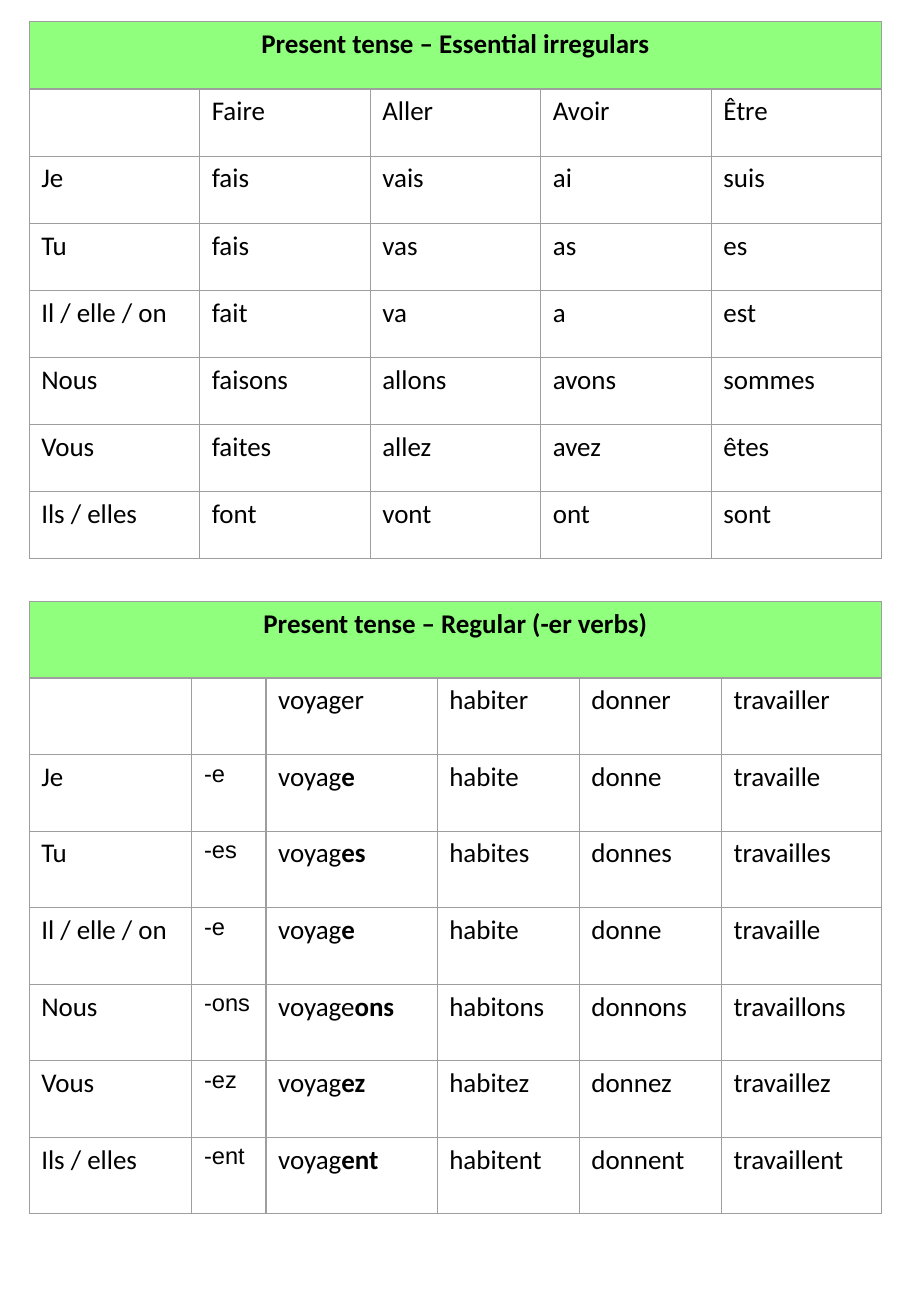
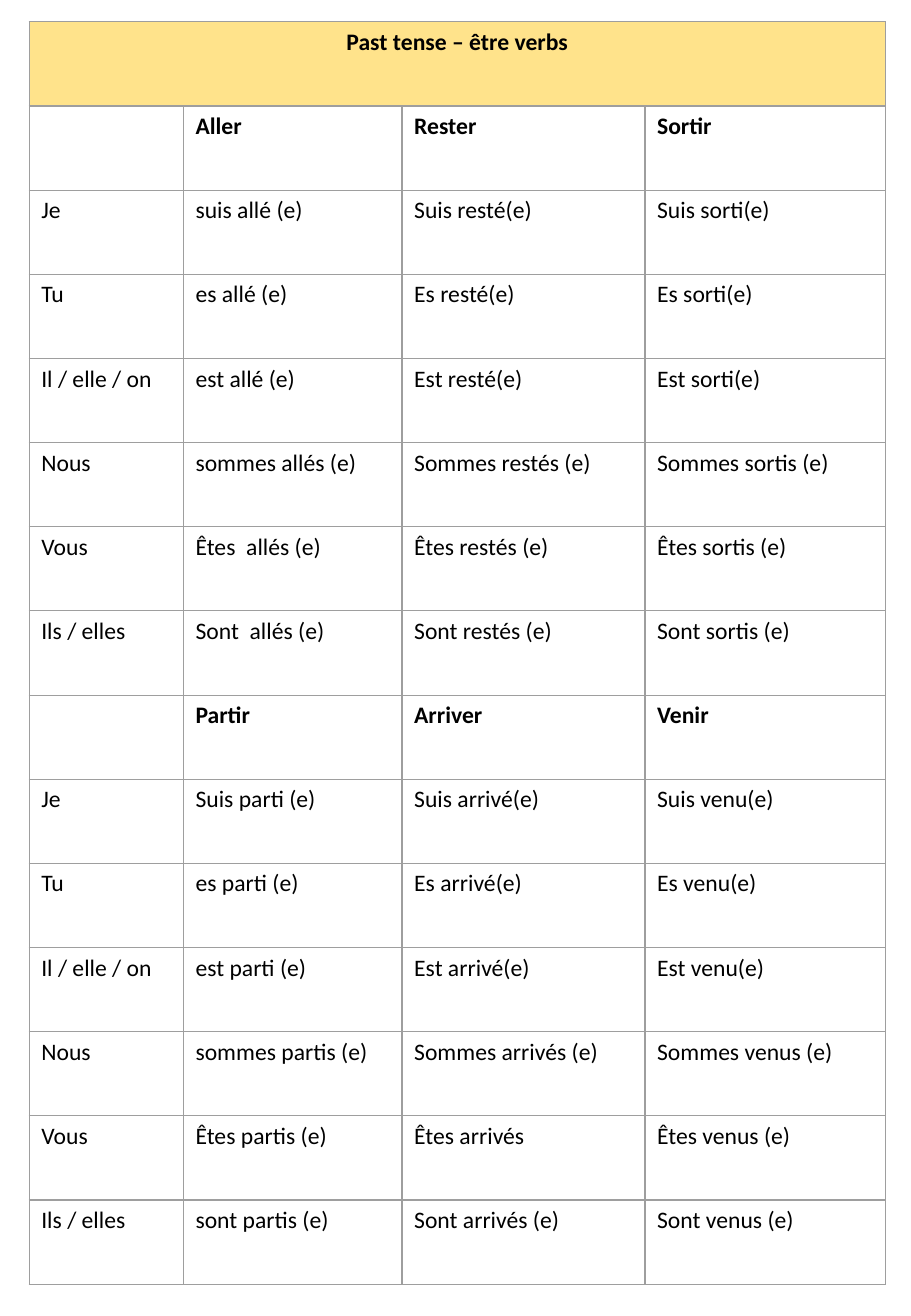
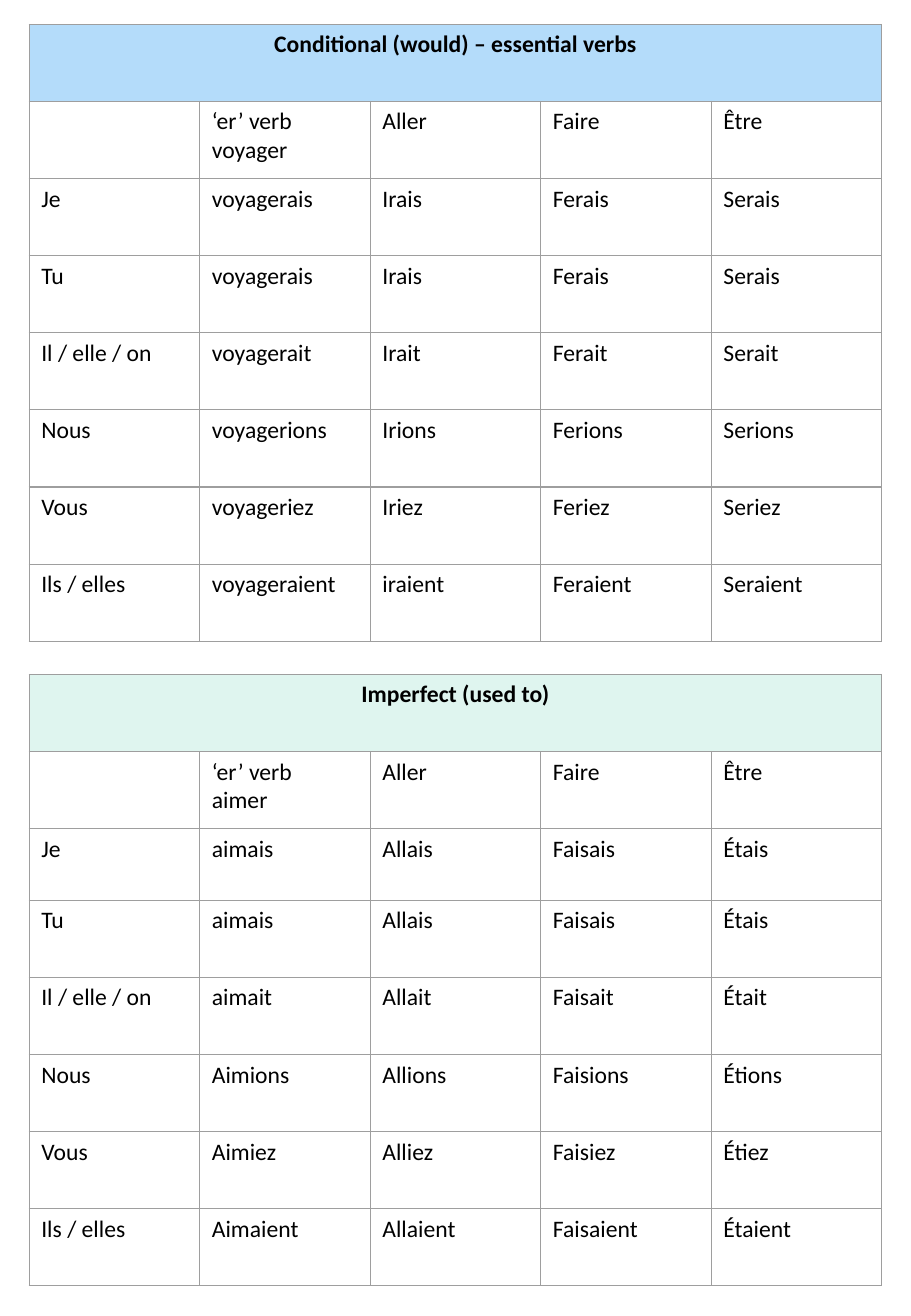
from lxml.etree import SubElement
from pptx import Presentation
from pptx.dml.color import RGBColor
from pptx.enum.text import PP_ALIGN
from pptx.oxml.ns import qn
from pptx.util import Inches, Pt

BLACK = RGBColor(0x00, 0x00, 0x00)
GREEN = RGBColor(0x90, 0xFF, 0x7D)
YELLOW = RGBColor(0xFF, 0xE3, 0x8B)
BLUE = RGBColor(0xB4, 0xDC, 0xFA)
MINT = RGBColor(0xDF, 0xF5, 0xEF)
GREY = RGBColor(0x9E, 0x9E, 0x9E)

LEFT = 0.24
WIDTH = 7.02
FIVE = [WIDTH / 5] * 5

# Each string is one column; "*" starts bold text and "\n" a new paragraph.
PERSONS = ", Je, Tu, Il / elle / on, Nous, Vous, Ils / elles"

ESSENTIAL = [
    PERSONS,
    "Faire, fais, fais, fait, faisons, faites, font",
    "Aller, vais, vas, va, allons, allez, vont",
    "Avoir, ai, as, a, avons, avez, ont",
    "Être, suis, es, est, sommes, êtes, sont",
]
REGULAR = [
    PERSONS,
    ", -e, -es, -e, -ons, -ez, -ent",
    "voyager, voyag*e, voyag*es, voyag*e, voyage*ons, voyag*ez, voyag*ent",
    "habiter, habite, habites, habite, habitons, habitez, habitent",
    "donner, donne, donnes, donne, donnons, donnez, donnent",
    "travailler, travaille, travailles, travaille, travaillons, travaillez, travaillent",
]
PAST = [
    PERSONS + ", " + PERSONS,
    "*Aller, suis allé (e), es allé (e), est allé (e), sommes allés (e), "
    "Êtes  allés (e), Sont  allés (e), "
    "*Partir, Suis parti (e), es parti (e), est parti (e), sommes partis (e), "
    "Êtes partis (e), sont partis (e)",
    "*Rester, Suis resté(e), Es resté(e), Est resté(e), Sommes restés (e), "
    "Êtes restés (e), Sont restés (e), "
    "*Arriver, Suis arrivé(e), Es arrivé(e), Est arrivé(e), Sommes arrivés (e), "
    "Êtes arrivés, Sont arrivés (e)",
    "*Sortir, Suis sorti(e), Es sorti(e), Est sorti(e), Sommes sortis (e), "
    "Êtes sortis (e), Sont sortis (e), "
    "*Venir, Suis venu(e), Es venu(e), Est venu(e), Sommes venus (e), "
    "Êtes venus (e), Sont venus (e)",
]
WOULD = [
    PERSONS,
    "‘er’ verb\nvoyager, voyagerais, voyagerais, voyagerait, voyagerions, voyageriez, voyageraient",
    "Aller, Irais, Irais, Irait, Irions, Iriez, iraient",
    "Faire, Ferais, Ferais, Ferait, Ferions, Feriez, Feraient",
    "Être, Serais, Serais, Serait, Serions, Seriez, Seraient",
]
USED = [
    PERSONS,
    "‘er’ verb\naimer, aimais, aimais, aimait, Aimions, Aimiez, Aimaient",
    "Aller, Allais, Allais, Allait, Allions, Alliez, Allaient",
    "Faire, Faisais, Faisais, Faisait, Faisions, Faisiez, Faisaient",
    "Être, Étais, Étais, Était, Étions, Étiez, Étaient",
]


def add_border(cell):
    props = cell._tc.get_or_add_tcPr()
    for side in ("a:lnL", "a:lnR", "a:lnT", "a:lnB"):
        line = SubElement(props, qn(side), w=str(Pt(0.75)))
        fill = SubElement(line, qn("a:solidFill"))
        SubElement(fill, qn("a:srgbClr"), val=str(GREY))


def add_run(para, text, style):
    run = para.add_run()
    run.text = text
    run.font.color.rgb = BLACK
    for name, value in style.items():
        setattr(run.font, name, value)


def write(cell, text, size):
    """Fill a cell; verb endings such as "-es" are set in Arial."""
    style = {"name": "Calibri", "size": Pt(size)}
    if text.startswith("-"):
        style = {"name": "Arial", "size": Pt(14)}
    frame = cell.text_frame
    for index, line in enumerate(text.split("\n")):
        para = frame.add_paragraph() if index else frame.paragraphs[0]
        for bold, part in enumerate(line.split("*")):
            if part:
                add_run(para, part, {**style, "bold": bool(bold)})


def add_verbs(slide, title, color, verbs, top, height, size, widths=FIVE):
    """Add a verb table with a coloured title row across all columns."""
    columns = [verb.split(", ") for verb in verbs]
    count = len(columns[0]) + 1
    frame = slide.shapes.add_table(count, len(columns), Inches(LEFT), Inches(top),
                                   Inches(sum(widths)), Inches(height))
    table = frame.table
    table.first_row = table.horz_banding = False
    for column, width in zip(table.columns, widths):
        column.width = Inches(width)
    for row in table.rows:
        row.height = Inches(height / count)
    for cell in table.iter_cells():
        add_border(cell)
        cell.fill.background()

    head = table.cell(0, 0)
    head.merge(table.cell(0, len(columns) - 1))
    head.fill.solid()
    head.fill.fore_color.rgb = color
    write(head, "*" + title, size)
    head.text_frame.paragraphs[0].alignment = PP_ALIGN.CENTER

    for col, words in enumerate(columns):
        for row, word in enumerate(words, 1):
            write(table.cell(row, col), word, size)
    return table


def main():
    deck = Presentation()
    deck.slide_width, deck.slide_height = Inches(7.5), Inches(10.83)
    blank = deck.slide_layouts[6]
    present, past, other = [deck.slides.add_slide(blank) for _ in range(3)]

    add_verbs(present, "Present tense – Essential irregulars", GREEN, ESSENTIAL,
              0.18, 4.42, 16)
    add_verbs(present, "Present tense – Regular (-er verbs)", GREEN, REGULAR,
              4.95, 5.04, 16, [1.34, 0.61, 1.41, 1.17, 1.17, 1.32])
    add_verbs(past, "Past tense – être verbs", YELLOW, PAST,
              0.18, 10.39, 14, [1.27, 1.8, 2, 1.98])
    add_verbs(other, "Conditional (would) – essential verbs", BLUE, WOULD,
              0.2, 5.08, 14)
    used = add_verbs(other, "Imperfect (used to)", MINT, USED, 5.55, 5.08, 14)
    used.rows[2].height = Inches(0.59)

    deck.save("out.pptx")


if __name__ == "__main__":
    main()
